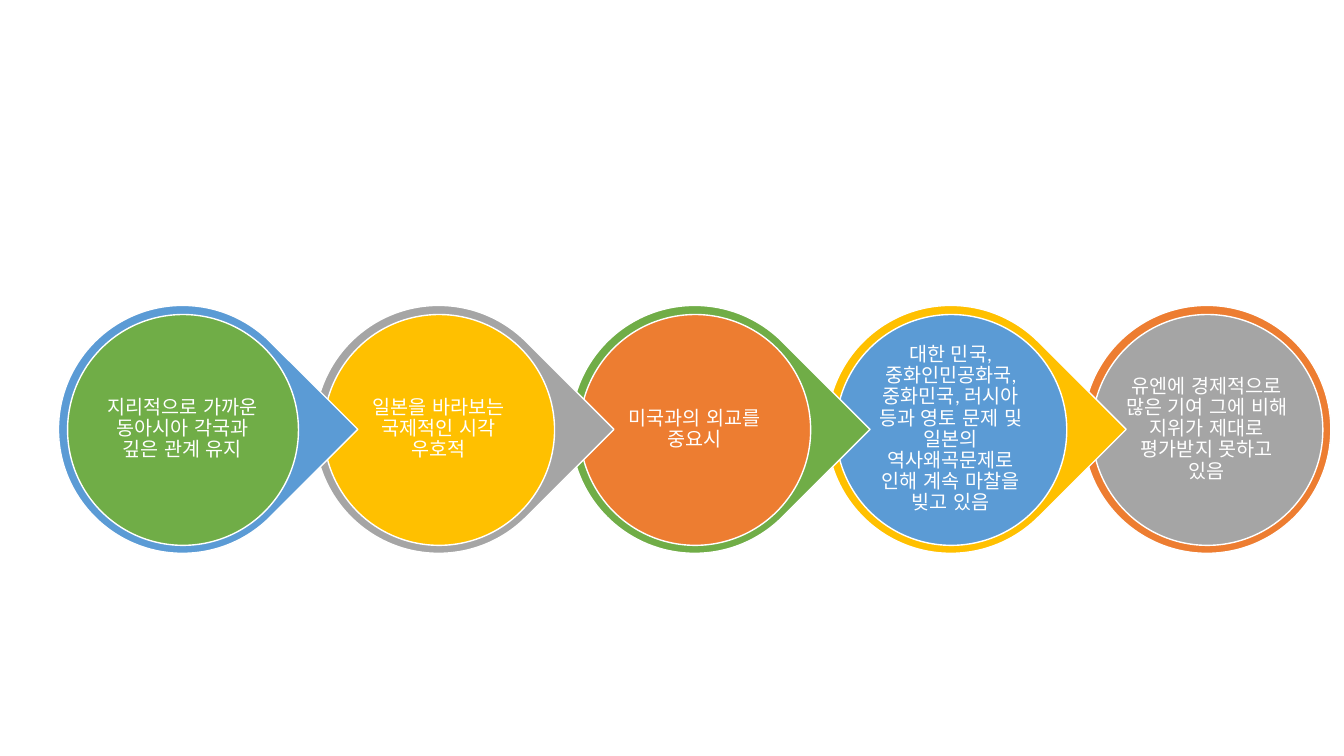
from typing import NamedTuple

from pptx import Presentation
from pptx import util as u
from pptx.dml.color import RGBColor
from pptx.enum import lang, shapes, text

PX = 9144  # EMU per px, 100 px to the inch
WIDTH, HEIGHT = 1333, 750
LEFT, PITCH, MIDDLE = 181, 254, 426
OUTER, INNER, LABEL = 246, 229, 164
WHITE = "FFFFFF"
BLUE, GRAY, GREEN, GOLD, ORANGE = "5B9BD5", "A5A5A5", "70AD47", "FFC000", "ED7D31"

FRAME = {
    "word_wrap": True,
    "vertical_anchor": text.MSO_ANCHOR.MIDDLE,
    "margin_left": 2 * PX,
    "margin_right": 2 * PX,
    "margin_top": 2 * PX,
    "margin_bottom": 2 * PX,
}
PARA = {"alignment": text.PP_ALIGN.CENTER, "line_spacing": 0.9}
FONT = {
    "name": "Calibri",
    "size": u.Pt(14),
    "language_id": lang.MSO_LANGUAGE_ID.KOREAN,
}


class Step(NamedTuple):
    ring: str
    disc: str
    words: str


STEPS = [
    Step(BLUE, GREEN, "지리적으로 가까운 동아시아 각국과 깊은 관계 유지"),
    Step(GRAY, GOLD, "일본을 바라보는 국제적인 시각 우호적"),
    Step(GREEN, ORANGE, "미국과의 외교를 중요시"),
    Step(GOLD, BLUE, "대한 민국, 중화인민공화국, 중화민국, 러시아 등과 영토 문제 및 "
                     "일본의 역사왜곡문제로 인해 계속 마찰을 빚고 있음"),
    Step(ORANGE, GRAY, "유엔에 경제적으로 많은 기여 그에 비해 지위가 제대로 "
                       "평가받지 못하고 있음"),
]


def paint(form, color: str) -> None:
    form.fill.solid()
    form.fill.fore_color.rgb = RGBColor.from_string(color)


def style(target, values: dict) -> None:
    for name, value in values.items():
        setattr(target, name, value)


def square(center: int, size: int) -> tuple[int, int, int, int]:
    """Box of a square centred on the row, in EMU."""
    half = size // 2
    return (center - half) * PX, (MIDDLE - half) * PX, size * PX, size * PX


def add_disc(group, kind, center: int, size: int, color: str):
    disc = group.shapes.add_shape(kind, *square(center, size))
    disc.shadow.inherit = False
    paint(disc, color)
    paint(disc.line, WHITE)
    disc.line.width = u.Pt(1)
    return disc


def add_label(group, center: int, words: str) -> None:
    frame = group.shapes.add_textbox(*square(center, LABEL)).text_frame
    style(frame, FRAME)
    para = frame.paragraphs[0]
    style(para, PARA)
    run = para.add_run()
    run.text = words
    style(run.font, FONT)
    paint(run.font, WHITE)


def add_step(group, step: Step, center: int, last: bool) -> None:
    kinds = shapes.MSO_SHAPE
    if last:
        add_disc(group, kinds.OVAL, center, OUTER, step.ring)
    else:
        drop = add_disc(group, kinds.TEAR, center, OUTER, step.ring)
        drop.adjustments[0] = 1
        drop.rotation = 45
    add_disc(group, kinds.OVAL, center, INNER, step.disc)
    add_label(group, center, step.words)


def main() -> None:
    deck = Presentation()
    deck.slide_width, deck.slide_height = WIDTH * PX, HEIGHT * PX
    slide = deck.slides.add_slide(deck.slide_layouts[6])
    group = slide.shapes.add_group_shape()
    final = len(STEPS) - 1
    # Right to left, so that each point lies over the next circle.
    for index in range(final, -1, -1):
        add_step(group, STEPS[index], LEFT + index * PITCH, index == final)
    deck.save("out.pptx")


if __name__ == "__main__":
    main()
